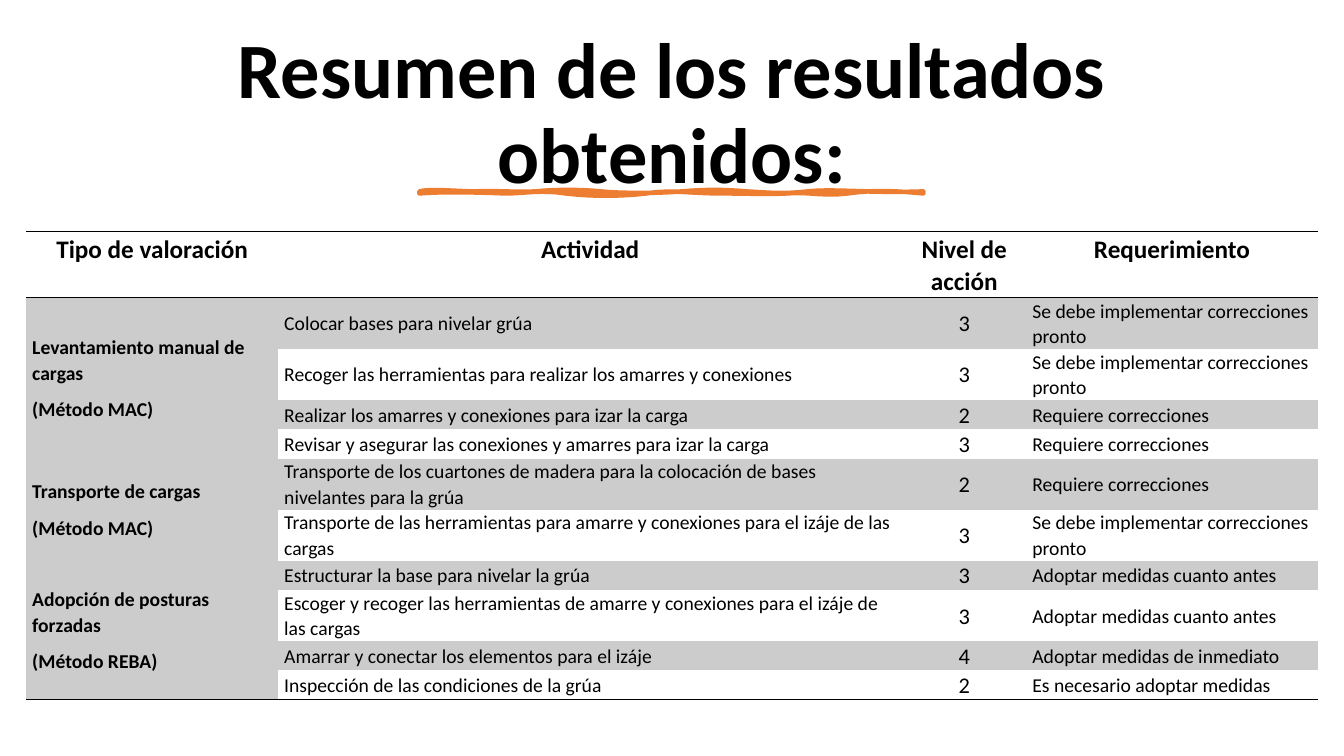
from dataclasses import dataclass

from lxml.etree import SubElement
from pptx import Presentation
from pptx.dml.color import RGBColor
from pptx.enum.text import MSO_ANCHOR, MSO_AUTO_SIZE, PP_ALIGN
from pptx.oxml.ns import qn
from pptx.slide import Slide
from pptx.table import Table, _Cell
from pptx.util import Inches, Pt

COLORS = {"text": "000000", "band": "CCCCCC", "accent": "ED7D31"}
FONT = "Calibri"
PLAIN_TABLE_STYLE = "{2D5ABB26-0587-4C30-8999-92F81FD0307C}"

# The slide is a grid of 100 columns by 100 rows
WIDTH, HEIGHT = Inches(13.33), Inches(7.5)
COLUMN, ROW = WIDTH / 100, HEIGHT / 100

HEADERS = ["Tipo de valoración", "Actividad", "Nivel de acción", "Requerimiento"]
COLUMN_SHARES = [18.75, 46.44, 9.23, 21.68]
HEADER_ROW, TALL_ROW, SHORT_ROW = 8.13, 6.67, 3.73


@dataclass
class Activity:
    name: str
    level: int
    requirement: str
    height: float = SHORT_ROW


@dataclass
class Assessment:
    name: str
    method: str
    activities: list[Activity]


SOON = "Se debe implementar correcciones pronto"
CORRECT = "Requiere correcciones"
PROMPTLY = "Adoptar medidas cuanto antes"

ASSESSMENTS = [
    Assessment("Levantamiento manual de cargas", "(Método MAC)", [
        Activity("Colocar bases para nivelar grúa", 3, SOON, TALL_ROW),
        Activity("Recoger las herramientas para realizar los amarres y conexiones",
                 3, SOON, TALL_ROW),
        Activity("Realizar los amarres y conexiones para izar la carga", 2, CORRECT),
        Activity("Revisar y asegurar las conexiones y amarres para izar la carga",
                 3, CORRECT),
    ]),
    Assessment("Transporte de cargas", "(Método MAC)", [
        Activity("Transporte de los cuartones de madera para la colocación de bases "
                 "nivelantes para la grúa", 2, CORRECT, TALL_ROW),
        Activity("Transporte de las herramientas para amarre y conexiones para el "
                 "izáje de las cargas", 3, SOON, TALL_ROW),
    ]),
    Assessment("Adopción de posturas forzadas", "(Método REBA)", [
        Activity("Estructurar la base para nivelar la grúa", 3, PROMPTLY),
        Activity("Escoger y recoger las herramientas de amarre y conexiones para el "
                 "izáje de las cargas", 3, PROMPTLY, TALL_ROW),
        Activity("Amarrar y conectar los elementos para el izáje", 4,
                 "Adoptar medidas de inmediato"),
        Activity("Inspección de las condiciones de la grúa", 2,
                 "Es necesario adoptar medidas"),
    ]),
]

# Brush stroke curves: x in percent of its length, y in 1/750 of the slide height
Point = tuple[float, float]
TOP_EDGE: list[Point] = [
    (0, 0), (2, -3), (8, 0), (11, 0), (15, -1), (19, 1), (23, 0),
    (27, -2), (32, -2), (36, 0), (40, 2), (47, 2), (52, 0),
    (57, -2), (60, -2), (65, 0), (69, 1), (72, 3), (77, 0),
    (82, -3), (90, 2), (100, 0)]
BOTTOM_EDGE: list[Point] = [
    (100, 2), (96, 0), (90, -2), (85, 2), (80, 5), (77, 0), (73, 2),
    (68, 3), (66, 2), (60, 2), (54, 2), (50, -2), (45, 2),
    (40, 5), (34, 5), (29, 2), (24, -2), (21, 2), (17, 2),
    (13, 1), (4, 0), (0, 2)]


def color(name: str) -> RGBColor:
    return RGBColor.from_string(COLORS[name])


def add_title(slide: Slide, text: str) -> None:
    title = slide.shapes.title
    title.left, title.top = round(5.25 * COLUMN), round(6.13 * ROW)
    title.width, title.height = round(89.5 * COLUMN), round(18.27 * ROW)
    frame = title.text_frame
    frame.text = text
    frame.word_wrap = True
    frame.auto_size = MSO_AUTO_SIZE.NONE
    frame.vertical_anchor = MSO_ANCHOR.MIDDLE
    paragraph = frame.paragraphs[0]
    paragraph.alignment = PP_ALIGN.CENTER
    paragraph.line_spacing = 0.9
    font = paragraph.font
    font.name, font.size, font.bold = FONT, Pt(56), True
    font.color.rgb = color("text")


def sample_curve(points: list[Point], steps: int = 8) -> list[Point]:
    """Turn a chain of cubic curves into points along it."""
    sampled = [points[0]]
    for first in range(0, len(points) - 1, 3):
        curve = points[first:first + 4]
        for step in range(1, steps + 1):
            t = step / steps
            weights = ((1 - t) ** 3, 3 * t * (1 - t) ** 2, 3 * t * t * (1 - t), t ** 3)
            sampled.append((sum(w * x for w, (x, _) in zip(weights, curve)),
                            sum(w * y for w, (_, y) in zip(weights, curve))))
    return sampled


def add_underline(slide: Slide) -> None:
    left, top, length = 31.2 * COLUMN, 25.33 * ROW, 37.5 * COLUMN
    outline = [(left + x * length / 100, top + y * HEIGHT / 750)
               for x, y in sample_curve(TOP_EDGE) + sample_curve(BOTTOM_EDGE)]
    builder = slide.shapes.build_freeform(*outline[0])
    builder.add_line_segments(outline[1:], close=True)
    stroke = builder.convert_to_shape()
    stroke.shadow.inherit = False
    stroke.fill.solid()
    stroke.fill.fore_color.rgb = color("accent")
    stroke.line.color.rgb = color("accent")
    stroke.line.width = Pt(3.25)


def fill_cell(cell: _Cell, lines: list[str], size: int, bold: bool = False,
              centered: bool = False, banded: bool = False) -> None:
    cell.margin_left = cell.margin_right = Inches(0.06)
    cell.margin_top = cell.margin_bottom = 0
    cell.vertical_anchor = MSO_ANCHOR.MIDDLE
    cell.text = "\n".join(lines)
    for paragraph in cell.text_frame.paragraphs:
        paragraph.alignment = PP_ALIGN.CENTER if centered else PP_ALIGN.LEFT
        paragraph.line_spacing = 1.07
        paragraph.space_after = Pt(8)
        font = paragraph.font
        font.name, font.size, font.bold = FONT, Pt(size), bold
        font.color.rgb = color("text")
    if banded:
        cell.fill.solid()
        cell.fill.fore_color.rgb = color("band")
    else:
        cell.fill.background()


def add_border(cell: _Cell, side: str) -> None:
    properties = cell._tc.get_or_add_tcPr()
    border = SubElement(properties, qn(f"a:{side}"), w=str(Pt(1)))
    solid = SubElement(border, qn("a:solidFill"))
    SubElement(solid, qn("a:srgbClr"), val=COLORS["text"])


def fill_assessments(table: Table) -> None:
    row = 1
    for assessment in ASSESSMENTS:
        last = row + len(assessment.activities) - 1
        label = table.cell(row, 0)
        label.merge(table.cell(last, 0))
        fill_cell(label, [assessment.name, assessment.method], 14, bold=True, banded=True)
        if last == len(table.rows) - 1 and row != last:
            label_is_lowest = label
        for activity in assessment.activities:
            banded = row % 2 == 1
            table.rows[row].height = round(activity.height * ROW)
            fill_cell(table.cell(row, 1), [activity.name], 14, banded=banded)
            fill_cell(table.cell(row, 2), [str(activity.level)], 16,
                      centered=True, banded=banded)
            fill_cell(table.cell(row, 3), [activity.requirement], 14, banded=banded)
            row += 1
    # Closing rule, also on the merged label that reaches the last row
    for cell in [label_is_lowest, *table.rows[row - 1].cells]:
        add_border(cell, "lnB")
        properties = cell._tc.tcPr
        properties.insert(0, properties[-1])


def add_results(slide: Slide) -> None:
    row_count = 1 + sum(len(assessment.activities) for assessment in ASSESSMENTS)
    table = slide.shapes.add_table(
        row_count, len(HEADERS), round(1.95 * COLUMN), round(30.67 * ROW),
        round(sum(COLUMN_SHARES) * COLUMN), round(60.8 * ROW)).table
    table._tbl.tblPr.find(qn("a:tableStyleId")).text = PLAIN_TABLE_STYLE
    table.rows[0].height = round(HEADER_ROW * ROW)
    for index, (header, share) in enumerate(zip(HEADERS, COLUMN_SHARES)):
        table.columns[index].width = round(share * COLUMN)
        cell = table.cell(0, index)
        add_border(cell, "lnT")
        add_border(cell, "lnB")
        fill_cell(cell, [header], 18, bold=True, centered=True)
        cell.vertical_anchor = MSO_ANCHOR.TOP
    fill_assessments(table)


def main() -> None:
    presentation = Presentation()
    presentation.slide_width, presentation.slide_height = WIDTH, HEIGHT
    slide = presentation.slides.add_slide(presentation.slide_layouts[5])
    add_title(slide, "Resumen de los resultados obtenidos:")
    add_underline(slide)
    add_results(slide)
    presentation.save("out.pptx")


if __name__ == "__main__":
    main()
